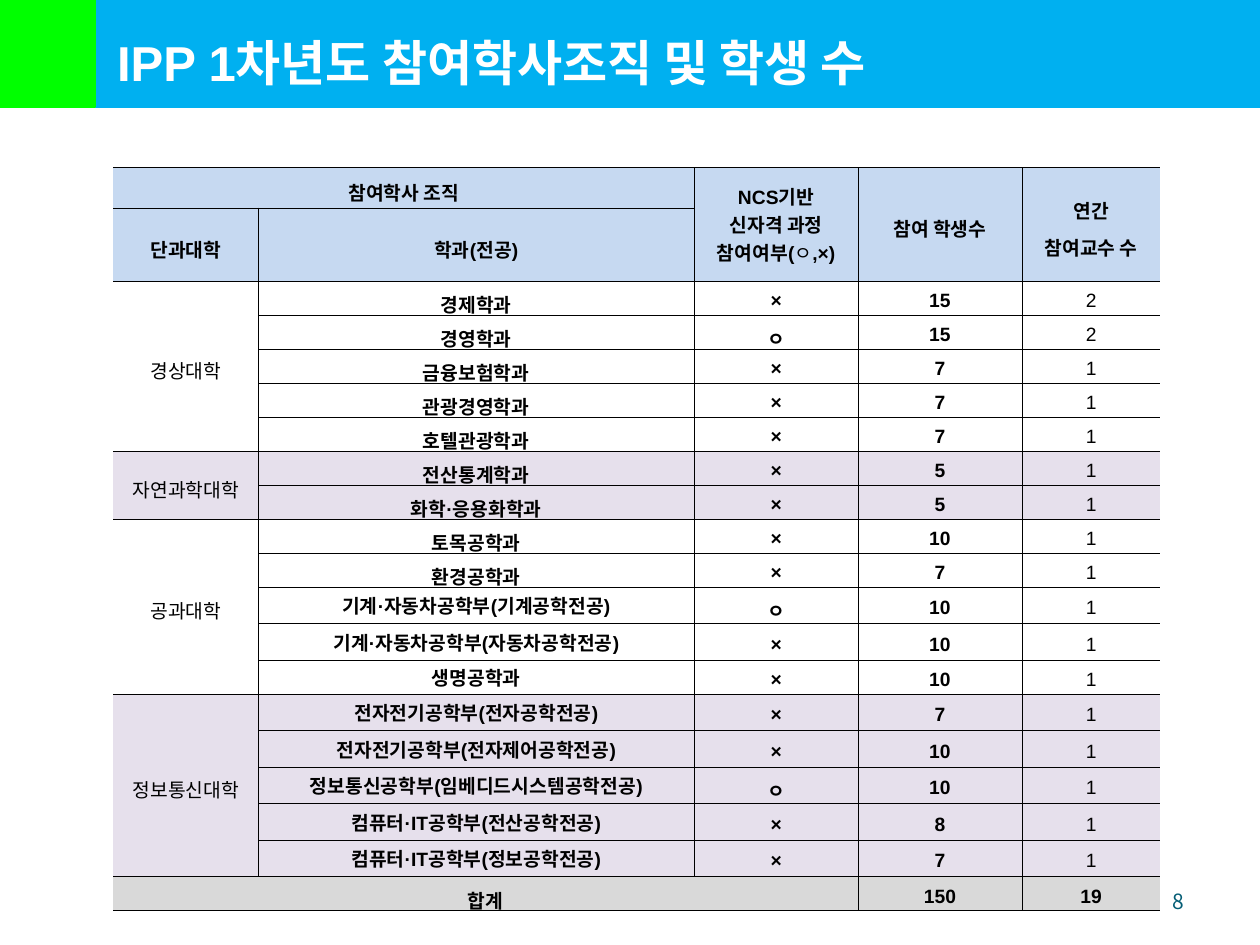
from lxml import etree
from pptx import Presentation
from pptx.dml.color import RGBColor
from pptx.enum.shapes import MSO_SHAPE
from pptx.enum.text import MSO_ANCHOR, MSO_AUTO_SIZE, PP_ALIGN
from pptx.oxml.ns import qn
from pptx.util import Inches, Pt

RECTANGLE = MSO_SHAPE.RECTANGLE
TOP, MIDDLE = MSO_ANCHOR.TOP, MSO_ANCHOR.MIDDLE
LEFT, CENTER, RIGHT = PP_ALIGN.LEFT, PP_ALIGN.CENTER, PP_ALIGN.RIGHT
FIT_SHAPE = MSO_AUTO_SIZE.SHAPE_TO_FIT_TEXT

LATIN_FONT, KOREAN_FONT = "Arial", "Noto Sans CJK KR"
HEADER_FILL, BAND_FILL, TOTAL_FILL = "C6D9F1", "E6E0EC", "D9D9D9"
COLUMN_WIDTHS = [1.15, 3.46, 1.3, 1.3, 1.1]
HEADER_HEIGHTS = [0.32, 0.58]
ROW_HEIGHT, MAJOR_ROW_HEIGHT = 0.27, 0.29
LOOSE = 1.3

# College, fill, then department, NCS participation, students, professors
COLLEGES = [
    ("경상대학", None, [
        ("경제학과", "×", 15, 2),
        ("경영학과", "ㅇ", 15, 2),
        ("금융보험학과", "×", 7, 1),
        ("관광경영학과", "×", 7, 1),
        ("호텔관광학과", "×", 7, 1)]),
    ("자연과학대학", BAND_FILL, [
        ("전산통계학과", "×", 5, 1),
        ("화학·응용화학과", "×", 5, 1)]),
    ("공과대학", None, [
        ("토목공학과", "×", 10, 1),
        ("환경공학과", "×", 7, 1),
        ("기계·자동차공학부(기계공학전공)", "ㅇ", 10, 1),
        ("기계·자동차공학부(자동차공학전공)", "×", 10, 1),
        ("생명공학과", "×", 10, 1)]),
    ("정보통신대학", BAND_FILL, [
        ("전자전기공학부(전자공학전공)", "×", 7, 1),
        ("전자전기공학부(전자제어공학전공)", "×", 10, 1),
        ("정보통신공학부(임베디드시스템공학전공)", "ㅇ", 10, 1),
        ("컴퓨터·IT공학부(전산공학전공)", "×", 8, 1),
        ("컴퓨터·IT공학부(정보공학전공)", "×", 7, 1)]),
]


def color(value):
    return RGBColor.from_string(value)


def format_paragraph(paragraph, size, font_color, bold=False, font=LATIN_FONT, align=LEFT):
    paragraph.alignment = align
    paragraph.font.name = font
    paragraph.font.size = Pt(size)
    paragraph.font.bold = bold
    paragraph.font.color.rgb = color(font_color)


def add_bars(slide, left, top, width, height):
    group = slide.shapes.add_group_shape()
    for bar_width, fill in [(width, "00B0F0"), (0.75, "00FF00")]:
        bar = group.shapes.add_shape(
            RECTANGLE, Inches(left), Inches(top), Inches(bar_width), Inches(height))
        bar.shadow.inherit = False
        bar.fill.solid()
        bar.fill.fore_color.rgb = color(fill)
        bar.line.color.rgb = color(fill)
        bar.line.width = Pt(2)
    return group


def place_title(slide, left, top, width, height):
    title = slide.shapes.title
    title.left, title.top = Inches(left), Inches(top)
    title.width, title.height = Inches(width), Inches(height)
    frame = title.text_frame
    frame.text = "IPP 1차년도 참여학사조직 및 학생 수"
    frame.vertical_anchor = TOP
    frame.auto_size = FIT_SHAPE
    format_paragraph(frame.paragraphs[0], 28, "FFFFFF", bold=True)
    return title


def add_page_number(slide, left, top, width, height):
    box = slide.shapes.add_textbox(Inches(left), Inches(top), Inches(width), Inches(height))
    frame = box.text_frame
    frame.word_wrap = True
    frame.vertical_anchor = MIDDLE
    frame.text = "8"
    format_paragraph(frame.paragraphs[0], 12, "045D75", font=KOREAN_FONT, align=RIGHT)


def set_borders(cell, sides):
    properties = cell._tc.get_or_add_tcPr()
    for index, side in enumerate(["L", "R", "T", "B"]):
        line = etree.Element(qn(f"a:ln{side}"), w=str(Pt(0.25)))
        if side in sides:
            fill = etree.SubElement(line, qn("a:solidFill"))
            etree.SubElement(fill, qn("a:srgbClr"), val="000000")
        else:
            etree.SubElement(line, qn("a:noFill"))
        properties.insert(index, line)


def fill_cell(cell, text, bold=True, spacing=LOOSE):
    cell.text = str(text)
    for paragraph in cell.text_frame.paragraphs:
        format_paragraph(paragraph, 11, "000000", bold, align=CENTER)
        paragraph.line_spacing = spacing


def fill_header(table):
    for row, column, text in [
            (0, 0, "참여학사 조직"), (0, 3, "참여 학생수"), (0, 4, "연간\n참여교수 수"),
            (1, 0, "단과대학"), (1, 1, "학과(전공)")]:
        fill_cell(table.cell(row, column), text)
    ncs_cell = table.cell(0, 2)
    fill_cell(ncs_cell, "NCS기반\n신자격 과정\n참여여부(", spacing=1.0)
    last_line = ncs_cell.text_frame.paragraphs[-1]
    for text, bold in [("ㅇ", False), (",×)", True)]:
        run = last_line.add_run()
        run.text = text
        run.font.bold = bold
    table.cell(0, 0).merge(table.cell(0, 1))
    for column in (2, 3, 4):
        table.cell(0, column).merge(table.cell(1, column))


def add_table(slide, left, top):
    heights = list(HEADER_HEIGHTS)
    fills = [HEADER_FILL] * 2
    for _, fill, departments in COLLEGES:
        for name, *_ in departments:
            heights.append(MAJOR_ROW_HEIGHT if "(" in name else ROW_HEIGHT)
            fills.append(fill)
    heights.append(ROW_HEIGHT)
    fills.append(TOTAL_FILL)

    table = slide.shapes.add_table(
        len(heights), len(COLUMN_WIDTHS), Inches(left), Inches(top),
        Inches(sum(COLUMN_WIDTHS)), Inches(sum(heights))).table
    table.first_row = table.horz_banding = False
    for column, width in zip(table.columns, COLUMN_WIDTHS):
        column.width = Inches(width)

    # Cell fills, margins and rules, open at the outer left and right
    for row, height, fill in zip(table.rows, heights, fills):
        row.height = Inches(height)
        for index, cell in enumerate(row.cells):
            cell.margin_left = cell.margin_right = Inches(0.05)
            cell.margin_top = cell.margin_bottom = Inches(0.01)
            cell.vertical_anchor = MIDDLE
            if fill:
                cell.fill.solid()
                cell.fill.fore_color.rgb = color(fill)
            else:
                cell.fill.background()
            sides = "TB" + ("L" if index > 0 else "")
            set_borders(cell, sides + ("R" if index < len(COLUMN_WIDTHS) - 1 else ""))
            fill_cell(cell, "")

    fill_header(table)

    # Colleges and their departments
    row = len(HEADER_HEIGHTS)
    for college, _, departments in COLLEGES:
        fill_cell(table.cell(row, 0), college, bold=False)
        table.cell(row, 0).merge(table.cell(row + len(departments) - 1, 0))
        for name, ncs, students, professors in departments:
            single = "(" in name or name == "생명공학과"
            fill_cell(table.cell(row, 1), name, spacing=1.0 if single else LOOSE)
            fill_cell(table.cell(row, 2), ncs)
            fill_cell(table.cell(row, 3), students)
            fill_cell(table.cell(row, 4), professors, bold=False)
            row += 1

    # Totals
    for column, text in [(0, "합계"), (3, 150), (4, 19)]:
        fill_cell(table.cell(row, column), text)
    table.cell(row, 0).merge(table.cell(row, 2))


def main():
    presentation = Presentation()
    presentation.slide_width, presentation.slide_height = Inches(10), Inches(7.5)
    slide = presentation.slides.add_slide(presentation.slide_layouts[5])
    add_page_number(slide, 7.17, 6.95, 2.33, 0.4)
    bars = add_bars(slide, 0, 0, 10, 0.84)
    title = place_title(slide, 0.83, 0.21, 7.4, 0.57)
    bars.element.addnext(title.element)  # title in front of the bars
    add_table(slide, 0.9, 1.33)
    presentation.save("out.pptx")


if __name__ == "__main__":
    main()
